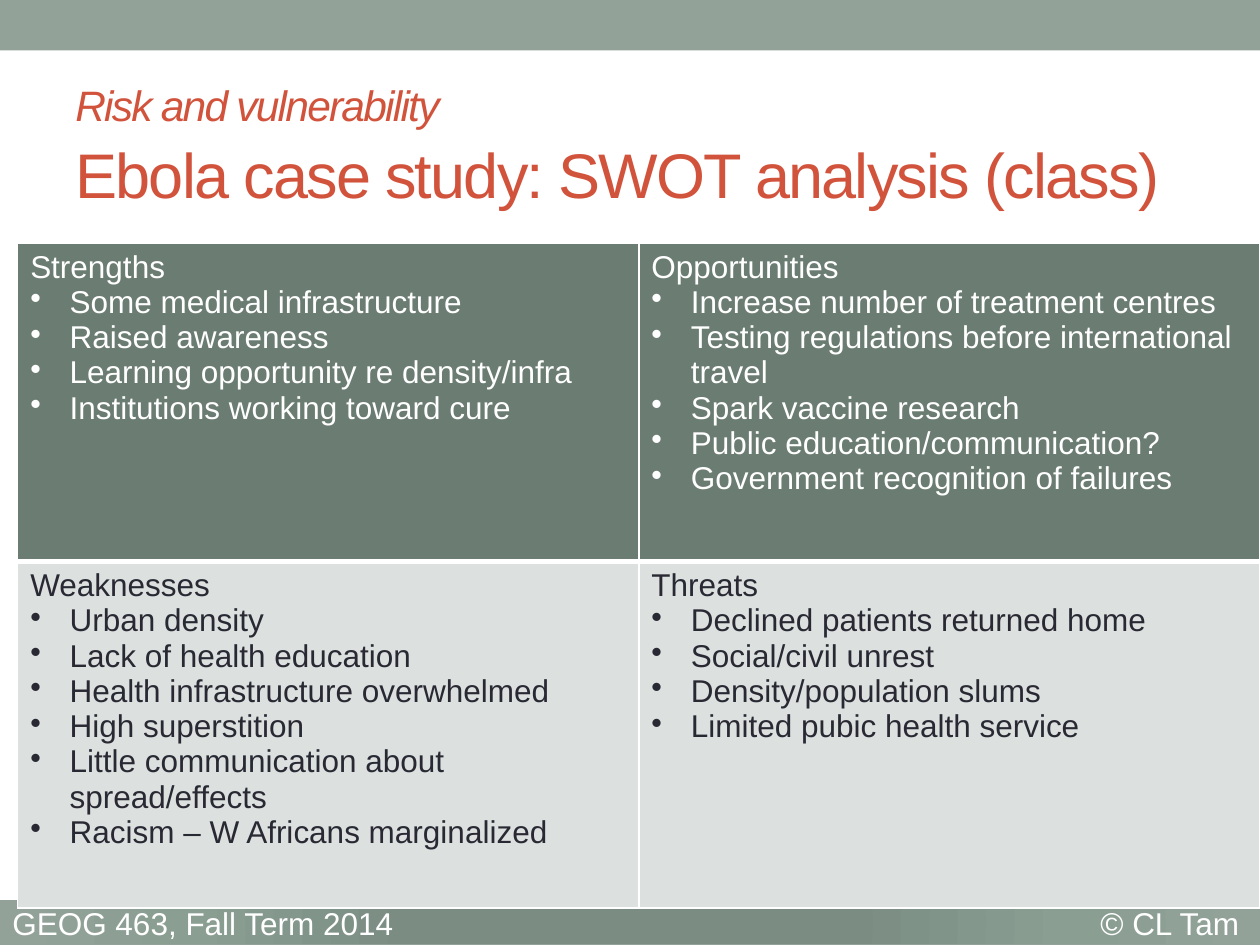
from pptx import Presentation
from pptx.util import Pt
from pptx.dml.color import RGBColor as RGB
from pptx.enum.shapes import MSO_SHAPE as SHAPE
from pptx.enum.text import MSO_ANCHOR as ANCHOR
from pptx.oxml import parse_xml
from pptx.oxml.ns import nsdecls
from lxml import etree

C = {"sage": "93A299", "moss": "7B8E82", "moss2": "7B8D83", "sage2": "8A9E92",
     "dark": "6B7D72", "pale": "DCE0DE", "red": "D2533C", "ink": "292934", "white": "FFFFFF"}
A = "{http://schemas.openxmlformats.org/drawingml/2006/main}"


def style(p, size, color):
    p.font.name, p.font.size = "Arial", Pt(size)
    p.font.color.rgb = RGB.from_string(C[color])


def bar(top, height):
    sp = s.shapes.add_shape(SHAPE.RECTANGLE, 0, Pt(top), Pt(720), Pt(height))
    sp.shadow.inherit = False
    sp.fill.solid()
    sp.fill.fore_color.rgb = RGB.from_string(C["sage"])
    sp.line.fill.background()
    return sp


prs = Presentation()
prs.slide_width, prs.slide_height = Pt(720), Pt(540)
s = prs.slides.add_slide(prs.slide_layouts[6])

# Top bar and footer bar
bar(0, 28.8)
footer = bar(514.8, 25.2)
footer.line.color.rgb = RGB.from_string(C["sage"])
footer.line.width = Pt(0.75)
stops = "".join(f'<a:gs pos="{pos * 1000}"><a:srgbClr val="{C[name]}"/></a:gs>'
                for pos, name in [(0, "moss"), (34, "moss2"), (70, "sage2"), (100, "sage")])
gradient = parse_xml(
    f'<a:gradFill {nsdecls("a")} rotWithShape="1"><a:gsLst>{stops}</a:gsLst><a:path path="circle">'
    '<a:fillToRect l="100000" t="100000" r="100000" b="100000"/></a:path></a:gradFill>')
solid = footer._element.spPr.find(A + "solidFill")
solid.getparent().replace(solid, gradient)

# Footer text, with the credit on a right tab
tf = footer.text_frame
tf.vertical_anchor = ANCHOR.MIDDLE
p = tf.paragraphs[0]
p.text = "GEOG 463, Fall Term 2014\t© CL Tam"
style(p, 18, "white")
pPr = p._p.get_or_add_pPr()
pPr.set("algn", "l")
tabs = parse_xml(f'<a:tabLst {nsdecls("a")}><a:tab pos="{Pt(701)}" algn="r"/></a:tabLst>')
pPr.find(A + "defRPr").addprevious(tabs)

# Title
tf = s.shapes.add_textbox(Pt(36), Pt(44), Pt(648), Pt(78)).text_frame
tf.word_wrap = True
tf.vertical_anchor = ANCHOR.MIDDLE
for i, (text, size) in enumerate([("Risk and vulnerability", 24.3),
                                  ("Ebola case study: SWOT analysis (class)", 36)]):
    p = tf.add_paragraph() if i else tf.paragraphs[0]
    p.space_before = Pt(3 * i)
    r = p.add_run()
    r.text = text
    style(r, size, "red")
    r.font.italic = i == 0
    r.font._element.set("spc", "-100")

# SWOT table: the first line of each cell is its heading
swot = [
    [["Strengths", "Some medical infrastructure", "Raised awareness",
      "Learning opportunity re density/infra", "Institutions working toward cure"],
     ["Opportunities", "Increase number of treatment centres",
      "Testing regulations before international travel", "Spark vaccine research",
      "Public education/communication?", "Government recognition of failures"]],
    [["Weaknesses", "Urban density", "Lack of health education",
      "Health infrastructure overwhelmed", "High superstition",
      "Little communication about spread/effects", "Racism – W Africans marginalized"],
     ["Threats", "Declined patients returned home", "Social/civil unrest",
      "Density/population slums", "Limited pubic health service"]],
]
looks = [("dark", "white", {"L": 1, "R": 1, "T": 1, "B": 3}),
         ("pale", "ink", {"L": 1, "R": 1, "T": 3, "B": 1})]
table = s.shapes.add_table(2, 2, Pt(10.1), Pt(139), Pt(710), Pt(380)).table
for row, height in zip(table.rows, (182, 198)):
    row.height = Pt(height)
for row, cells, (fill, color, borders) in zip(table.rows, swot, looks):
    for cell, lines in zip(row.cells, cells):
        tf = cell.text_frame
        for i, text in enumerate(lines):
            p = tf.add_paragraph() if i else tf.paragraphs[0]
            p.text = text
            style(p, 18, color)
            if i:
                pPr = p._p.get_or_add_pPr()
                pPr.set("marL", str(Pt(22.5)))
                pPr.set("indent", str(-Pt(22.5)))
                bullet = etree.Element(A + "buChar", char="•")
                pPr.find(A + "defRPr").addprevious(bullet)
        tcPr = cell._tc.get_or_add_tcPr()
        for side, width in borders.items():
            ln = etree.SubElement(tcPr, f"{A}ln{side}", w=str(Pt(width)))
            paint = etree.SubElement(ln, A + "solidFill")
            etree.SubElement(paint, A + "srgbClr", val=C["white"])
        cell.fill.solid()
        cell.fill.fore_color.rgb = RGB.from_string(C[fill])

prs.save("out.pptx")
